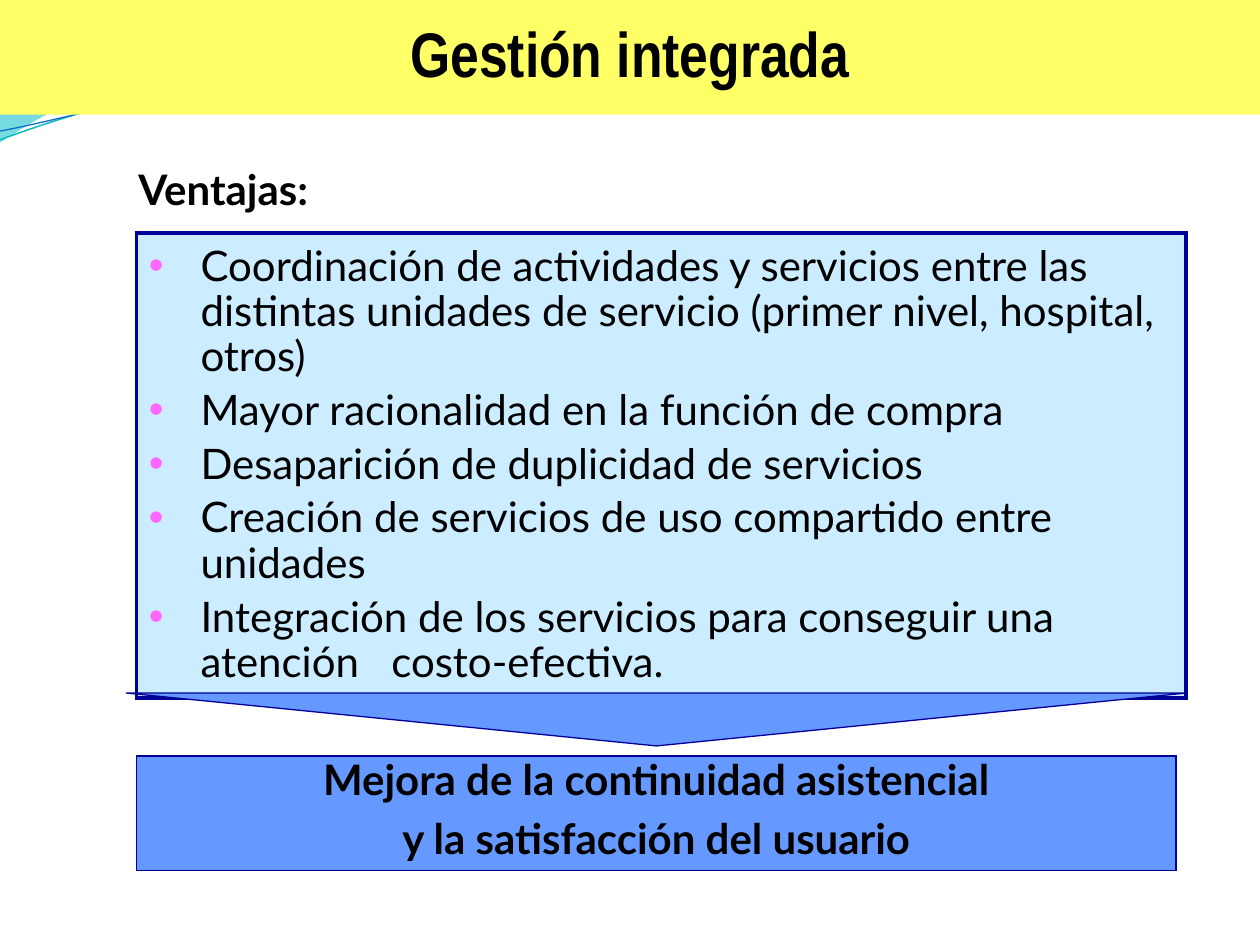
from math import cos, radians, sin

from lxml.etree import SubElement
from pptx import Presentation
from pptx.dml.color import RGBColor
from pptx.enum.shapes import MSO_SHAPE
from pptx.enum.text import MSO_ANCHOR, MSO_AUTO_SIZE, PP_ALIGN
from pptx.oxml.ns import qn
from pptx.util import Inches, Pt

LEFT = 13 / 12
ADVANTAGES = [
    "Coordinación de actividades y servicios entre las distintas unidades de "
    "servicio (primer nivel, hospital, otros)",
    "Mayor racionalidad en la función de compra",
    "Desaparición de duplicidad de servicios",
    "Creación de servicios de uso compartido entre unidades",
    "Integración de los servicios para conseguir una atención   costo-efectiva.",
]
RESULT = ["Mejora de la continuidad asistencial", "y la satisfacción del usuario"]
WIDE_WAVE = [
    [(0, 0)], [(4.4, -0.01)],
    [(4.76, 0.17), (6.64, 0.63), (7.58, 0.63)],
    [(8.53, 0.63), (9.58, 0.26), (10, 0.09)],
    [(10.01, 0.36)],
    [(9.83, 0.44), (8.7, 0.76), (7.46, 0.75)],
    [(6.22, 0.75), (3.82, 0.28), (2.57, 0.34)],
    [(1.29, 0.36), (0.46, 0.83), (-0.01, 1.13)],
]
RIGHT_WAVE = [
    [(4.79, -0.01)],
    [(5.09, 0.11), (6.82, 0.62), (7.69, 0.65)],
    [(8.56, 0.69), (9.61, 0.32), (10, 0.21)],
    [(10, 0)],
]
TEAL_LINE = [
    [(0, 1.11)],
    [(0.48, 0.93), (1.58, 0.57), (2.77, 0.52)],
    [(3.95, 0.47), (5.93, 0.89), (7.13, 0.8)],
    [(8.33, 0.71), (9.38, 0.15), (9.98, -0.02)],
]
BLUE_LINE = [
    [(0, 1.04)],
    [(0.47, 0.96), (1.64, 0.61), (2.83, 0.56)],
    [(4.03, 0.51), (5.97, 0.84), (7.17, 0.75)],
    [(8.36, 0.67), (9.41, 0.21), (10, 0.06)],
]
TILT = 2.7


def color(value):
    """Return the colour of a hex string."""
    return RGBColor.from_string(value)


def turn(segments, center, degrees):
    """Turn all points clockwise about a center."""
    cosine, sine = cos(radians(degrees)), sin(radians(degrees))
    center_x, center_y = center
    return [[(center_x + (x - center_x) * cosine - (y - center_y) * sine,
              center_y + (x - center_x) * sine + (y - center_y) * cosine)
             for x, y in segment] for segment in segments]


def add_outline(slide, segments, close):
    """Add a freeform whose three-point segments are Bézier curves."""
    points = [(Inches(x), Inches(y)) for segment in segments for x, y in segment]
    builder = slide.shapes.build_freeform(*points[0])
    builder.add_line_segments(points[1:], close=close)
    shape = builder.convert_to_shape()
    shape.shadow.inherit = False
    nodes = iter(list(shape._element.iter(qn("a:lnTo"))))
    for segment in segments[1:]:
        first, *others = [next(nodes) for _ in segment]
        if others:
            first.tag = qn("a:cubicBezTo")
        for node in others:
            first.extend(list(node))
            node.getparent().remove(node)
    return shape


def add_wave(slide, segments, stops):
    """Add a wave filled with a translucent vertical gradient."""
    shape = add_outline(slide, segments, True)
    shape.line.fill.background()
    shape.fill.gradient()
    shape.fill.gradient_angle = 270
    for stop, (position, value, _) in zip(shape.fill.gradient_stops, stops):
        stop.color.rgb = color(value)
        stop.position = position
    for element, (_, _, opacity) in zip(shape._element.iter(qn("a:srgbClr")), stops):
        SubElement(element, qn("a:alpha"), val=str(opacity * 1000))


def add_curve(slide, segments, center, line, width):
    """Add an open curved line tilted about its center."""
    shape = add_outline(slide, turn(segments, center, TILT), False)
    shape.rotation = 360 - TILT
    shape.fill.background()
    shape.line.color.rgb = color(line)
    shape.line.width = Pt(width)


def add_box(slide, kind, bounds, fill, line=None, width=0.75):
    """Add a filled preset shape, outlined when a line colour is given."""
    shape = slide.shapes.add_shape(kind, *map(Inches, bounds))
    shape.shadow.inherit = False
    shape.fill.solid()
    shape.fill.fore_color.rgb = color(fill)
    if line:
        shape.line.color.rgb = color(line)
        shape.line.width = Pt(width)
        SubElement(shape.line._get_or_add_ln(), qn("a:miter"), lim="800000")
    else:
        shape.line.fill.background()
    return shape


def write(shape, texts, size=24, font="Lato", bold=True, align=PP_ALIGN.LEFT,
          spacing=1.0, before=0, after=0):
    """Write one run per paragraph into a shape."""
    frame = shape.text_frame
    frame.word_wrap = True
    frame.vertical_anchor = MSO_ANCHOR.MIDDLE
    for index, text in enumerate(texts):
        paragraph = frame.add_paragraph() if index else frame.paragraphs[0]
        paragraph.alignment = align
        paragraph.line_spacing = spacing
        paragraph.space_before = Pt(before)
        paragraph.space_after = Pt(after)
        run = paragraph.add_run()
        run.text = text
        run.font.size = Pt(size)
        run.font.name = font
        run.font.bold = bold
        run.font.color.rgb = color("000000")


def add_bullets(shape, value, indent):
    """Give every paragraph a coloured bullet and a hanging indent."""
    for paragraph in shape.text_frame.paragraphs:
        properties = paragraph._p.get_or_add_pPr()
        properties.set("marL", str(Inches(indent)))
        properties.set("indent", str(-Inches(indent)))
        bullet_color = SubElement(properties, qn("a:buClr"))
        SubElement(bullet_color, qn("a:srgbClr"), val=value)
        SubElement(properties, qn("a:buFont"), typeface="Arial")
        SubElement(properties, qn("a:buChar"), char="•")


def main():
    """Build the slide and save it."""
    presentation = Presentation()
    presentation.slide_width = Inches(10)
    presentation.slide_height = Inches(7.5)
    slide = presentation.slides.add_slide(presentation.slide_layouts[6])

    add_wave(slide, WIDE_WAVE, [(0, "0074A1", 45), (1, "00C6CF", 55)])
    add_wave(slide, RIGHT_WAVE, [(0, "00A1A9", 30), (0.8, "008BBF", 45)])
    add_curve(slide, TEAL_LINE, (4.99, 0.58), "0AB8BF", 0.85)
    add_curve(slide, BLUE_LINE, (5, 0.59), "0F6FC6", 0.75)

    title = add_box(slide, MSO_SHAPE.RECTANGLE, (0, 0, 10, 0.91), "FFFF66")
    write(title, ["Gestión integrada"], 36, "Arial Narrow",
          align=PP_ALIGN.CENTER, spacing=0.9)

    advantages = add_box(slide, MSO_SHAPE.RECTANGLE, (LEFT, 1.85, 8.33, 3.69),
                         "CCECFF", "000099", 2.25)
    write(advantages, ADVANTAGES, bold=False, spacing=0.9, after=4.8)
    add_bullets(advantages, "FF66FF", 0.41)

    heading = slide.shapes.add_textbox(*map(Inches, (1, 1.25, 7.92, 0.5)))
    write(heading, ["Ventajas:"], before=12)

    add_box(slide, MSO_SHAPE.FLOWCHART_MERGE, (1, 5.5, 8.42, 0.42), "6699FF", "000099")
    result = add_box(slide, MSO_SHAPE.RECTANGLE, (LEFT, 6, 8.25, 0.91), "6699FF", "000099")
    write(result, RESULT, align=PP_ALIGN.CENTER, spacing=0.75, before=12)

    for shape in (advantages, heading, result):
        shape.text_frame.auto_size = MSO_AUTO_SIZE.SHAPE_TO_FIT_TEXT
    presentation.save("out.pptx")


if __name__ == "__main__":
    main()
